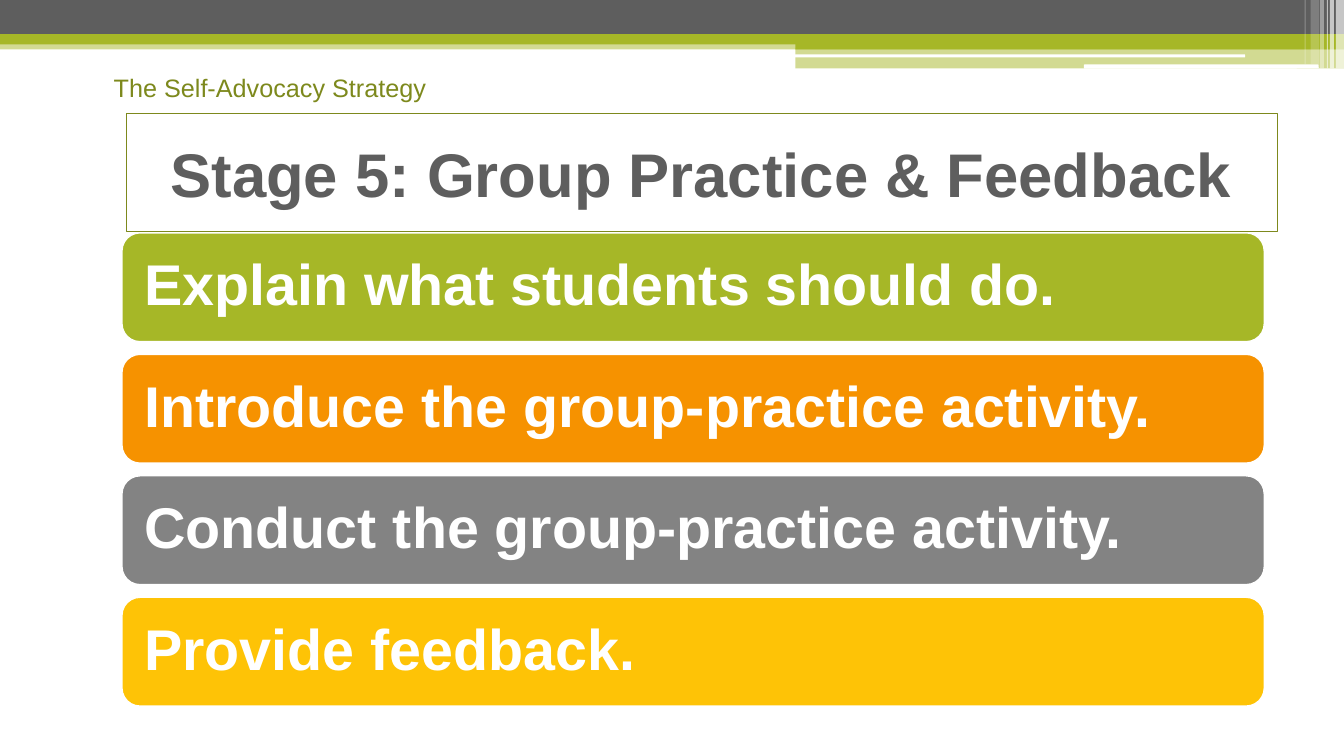
from lxml import etree
from pptx import Presentation
from pptx.dml.color import RGBColor
from pptx.enum.shapes import MSO_SHAPE
from pptx.enum.text import MSO_ANCHOR, PP_ALIGN
from pptx.oxml.ns import qn
from pptx.util import Inches, Pt

RECT, ROUND = MSO_SHAPE.RECTANGLE, MSO_SHAPE.ROUNDED_RECTANGLE
LEFT, CENTER = PP_ALIGN.LEFT, PP_ALIGN.CENTER
TOP, MIDDLE = MSO_ANCHOR.TOP, MSO_ANCHOR.MIDDLE

WIDE, HIGH = 13.33, 7.5
GREEN, GRAY, OLIVE, WHITE = "A6B727", "5E5E5E", "7D891D", "FFFFFF"

HEADER = "The Self-Advocacy Strategy"
TITLE = "Stage 5: Group Practice & Feedback"
STEPS = [
    ("Explain what students should do.", GREEN),
    ("Introduce the group-practice activity.", "F69200"),
    ("Conduct the group-practice activity.", "838383"),
    ("Provide feedback.", "FEC306"),
]
BANDS = [
    (RECT, 0, 0.4, WIDE, 0.09, GREEN, 50),
    (RECT, 0, 0, WIDE, 0.34, GRAY, 100),
    (RECT, 0, 0.34, WIDE, 0.1, GREEN, 100),
    (RECT, 7.89, 0.39, 5.44, 0.1, GREEN, 100),
    (RECT, 7.89, 0.48, 5.44, 0.2, GREEN, 50),
    (ROUND, 7.88, 0.54, 4.47, 0.03, WHITE, 100),
    (ROUND, 10.75, 0.64, 2.33, 0.04, WHITE, 100),
]
STRIPES = [
    (13.25, 0.08, 0.68, 65),
    (13.19, 0.04, 0.68, 65),
    (13.16, 0.01, 0.68, 60),
    (13.09, 0.04, 0.68, 40),
    (13, 0.08, 0.64, 20),
    (12.94, 0.01, 0.64, 30),
]
BAR_X, BAR_Y, BAR_W, BAR_H, PITCH = 1.21, 2.31, 11.33, 1.08, 1.205


def color(code):
    return RGBColor.from_string(code)


def add_box(kind, x, y, w, h, fill=None, alpha=100, line=None, width=1):
    box = slide.shapes.add_shape(kind, Inches(x), Inches(y), Inches(w), Inches(h))
    box.shadow.inherit = False
    if fill:
        box.fill.solid()
        box.fill.fore_color.rgb = color(fill)
        if alpha < 100:
            tone = box.fill._xPr.find(".//" + qn("a:srgbClr"))
            etree.SubElement(tone, qn("a:alpha")).set("val", str(alpha * 1000))
    else:
        box.fill.background()
    if line:
        box.line.color.rgb = color(line)
        box.line.width = Pt(width)
    else:
        box.line.fill.background()
    return box


def put_text(box, text, size, ink, bold=False, align=LEFT, anchor=MIDDLE,
             wrap=True, inset=0.1, space=1.0):
    frame = box.text_frame
    frame.word_wrap = wrap
    frame.vertical_anchor = anchor
    frame.margin_left = frame.margin_right = Inches(inset)
    frame.margin_top = frame.margin_bottom = Inches(0.05)
    line = frame.paragraphs[0]
    line.alignment = align
    line.line_spacing = space
    run = line.add_run()
    run.text = text
    run.font.name = "Arial"
    run.font.size = Pt(size)
    run.font.bold = bold
    run.font.color.rgb = color(ink)


deck = Presentation()
deck.slide_width, deck.slide_height = Inches(WIDE), Inches(HIGH)
slide = deck.slides.add_slide(deck.slide_layouts[6])

for kind, x, y, w, h, fill, alpha in BANDS:
    add_box(kind, x, y, w, h, fill, alpha)
for x, w, h, alpha in STRIPES:
    add_box(RECT, x, 0, w, h, WHITE, alpha)

label = slide.shapes.add_textbox(Inches(1.03), Inches(0.67), Inches(3.33), Inches(0.4))
put_text(label, HEADER, 18, OLIVE, anchor=TOP, wrap=False)

for i, (text, fill) in enumerate(STEPS):
    bar = add_box(ROUND, BAR_X, BAR_Y + i * PITCH, BAR_W, BAR_H, fill, line=WHITE)
    put_text(bar, text, 41, WHITE, bold=True, inset=0.17, space=0.9)

title = add_box(RECT, 1.25, 1.13, 11.42, 1.17, line=OLIVE, width=0.75)
put_text(title, TITLE, 44, GRAY, bold=True, align=CENTER)

deck.save("out.pptx")
